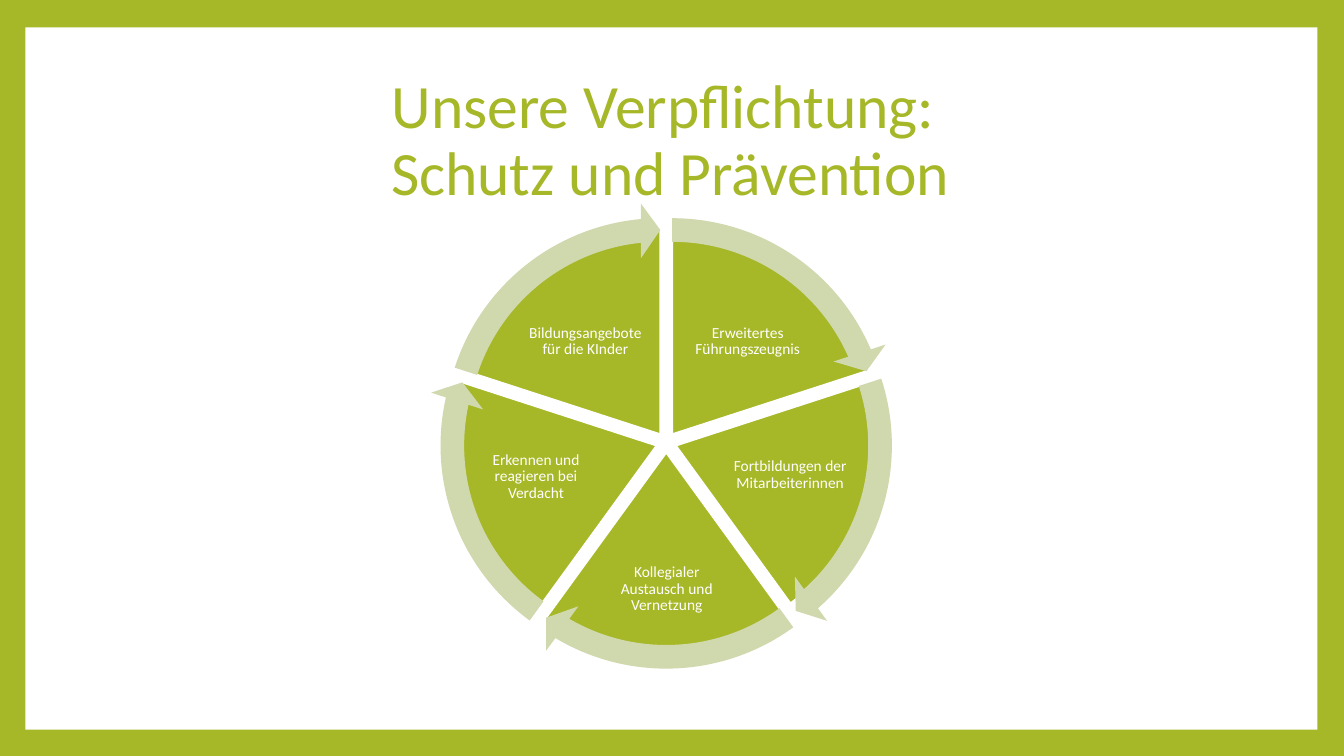
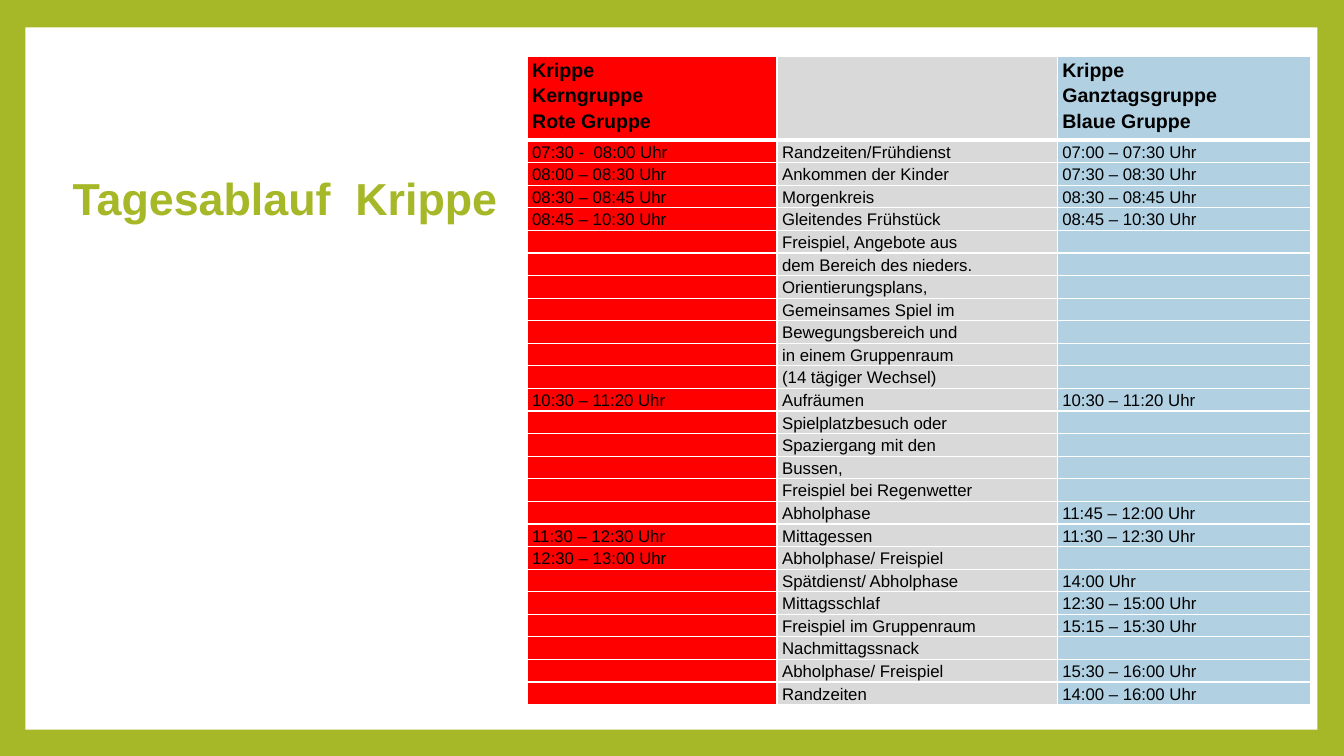
from math import cos, radians, sin

from lxml.etree import SubElement
from pptx import Presentation
from pptx.dml.color import RGBColor
from pptx.enum.shapes import MSO_SHAPE
from pptx.enum.text import MSO_ANCHOR, MSO_AUTO_SIZE, PP_ALIGN
from pptx.oxml.ns import qn
from pptx.util import Cm, Pt

COLORS = {
    "green": "A6B727",
    "pale": "D0D8AD",
    "white": "FFFFFF",
    "black": "000000",
    "red": "FF0000",
    "grey": "D9D9D9",
    "blue": "B1D1E3",
}
TITLE_ONLY = 5

# Lengths in cm, boxes as left, top, width, height
PANEL = (0.64, 0.69, 32.56, 17.7)

DUTY_TITLE = "Unsere Verpflichtung: \vSchutz und Prävention"
DUTY_TITLE_BOX = (3.18, 1.7, 27.43, 3.76)
# Label, label box, diameter of the sector; clockwise from the top
DUTIES = [
    ("Erweitertes Führungszeugnis", (17.17, 7.49, 3.35, 2.24), 10.41),
    ("Fortbildungen der Mitarbeiterinnen", (18.44, 10.8, 2.95, 2.34), 9.84),
    ("Kollegialer Austausch und Vernetzung", (15.32, 13.49, 2.97, 2.72), 10.41),
    ("Erkennen und reagieren bei Verdacht", (11.96, 10.77, 3.1, 2.49), 10.41),
    ("Bildungsangebote für die KInder", (13.08, 7.49, 3.35, 2.24), 10.41),
]
WHEEL_CENTER = (16.79, 11.15)
SECTOR_OFFSET = 0.25
ARROW_DIAMETER = 11.68
ARROW_BAND, ARROW_HEAD = 0.051, 0.059
HEAD_ANGLE = 5.46
ANGLE_UNIT = 0.6  # adjustment value of one degree

DAY_TITLE = "Tagesablauf  Krippe"
DAY_TITLE_BOX = (1.45, 4.32, 13.21, 11.18)
SCHEDULE_AT = (13.28, 1.42)
SCHEDULE_COLUMNS = [(6.3, "red"), (7.06, "grey"), (6.38, "blue")]
HEADER_HEIGHT, ROW_HEIGHT = 2.11, 0.57
SCHEDULE = [
    ("Krippe\nKerngruppe\nRote Gruppe", "", "Krippe\nGanztagsgruppe\nBlaue Gruppe"),
    ("07:30 -  08:00 Uhr", "Randzeiten/Frühdienst", "07:00 – 07:30 Uhr"),
    ("08:00 – 08:30 Uhr", "Ankommen der Kinder", "07:30 – 08:30 Uhr"),
    ("08:30 – 08:45 Uhr", "Morgenkreis", "08:30 – 08:45 Uhr"),
    ("08:45 – 10:30 Uhr", "Gleitendes Frühstück", "08:45 – 10:30 Uhr"),
    ("", "Freispiel, Angebote aus", ""),
    ("", "dem Bereich des nieders.", ""),
    ("", "Orientierungsplans,", ""),
    ("", "Gemeinsames Spiel im", ""),
    ("", "Bewegungsbereich und", ""),
    ("", "in einem Gruppenraum", ""),
    ("", "(14 tägiger Wechsel)", ""),
    ("10:30 – 11:20 Uhr", "Aufräumen", "10:30 – 11:20 Uhr"),
    ("", "Spielplatzbesuch oder", ""),
    ("", "Spaziergang mit den", ""),
    ("", "Bussen,", ""),
    ("", "Freispiel bei Regenwetter", ""),
    ("", "Abholphase", "11:45 – 12:00 Uhr"),
    ("11:30 – 12:30 Uhr", "Mittagessen", "11:30 – 12:30 Uhr"),
    ("12:30 – 13:00 Uhr", "Abholphase/ Freispiel", ""),
    ("", "Spätdienst/ Abholphase", "14:00 Uhr"),
    ("", "Mittagsschlaf", "12:30 – 15:00 Uhr"),
    ("", "Freispiel im Gruppenraum", "15:15 – 15:30 Uhr"),
    ("", "Nachmittagssnack", ""),
    ("", "Abholphase/ Freispiel", "15:30 – 16:00 Uhr"),
    ("", "Randzeiten", "14:00 – 16:00 Uhr"),
]


def rgb(name):
    return RGBColor.from_string(COLORS[name])


def write(frame, text, *, size, color, font="Calibri", bold=False,
          align=PP_ALIGN.LEFT, spacing=0.9):
    """Fill a text frame, one paragraph per line of text."""
    frame.text = text
    for paragraph in frame.paragraphs:
        paragraph.alignment = align
        paragraph.line_spacing = spacing
        for run in paragraph.runs:
            run.font.name = font
            run.font.size = Pt(size)
            run.font.bold = bold
            run.font.color.rgb = rgb(color)
        if not paragraph.runs:
            # An empty cell would otherwise grow to the default text size
            paragraph._p.get_or_add_endParaRPr().set("sz", str(size * 100))


def set_margins(holder, left, top, right, bottom):
    holder.margin_left, holder.margin_top = Cm(left), Cm(top)
    holder.margin_right, holder.margin_bottom = Cm(right), Cm(bottom)


def add_filled(shapes, kind, box, fill, line=None, adjustments=()):
    shape = shapes.add_shape(kind, *map(Cm, box))
    shape.shadow.inherit = False
    shape.fill.solid()
    shape.fill.fore_color.rgb = rgb(fill)
    if line:
        shape.line.color.rgb = rgb(line)
        shape.line.width = Pt(1.5)
    else:
        shape.line.fill.background()
    for index, value in enumerate(adjustments):
        shape.adjustments[index] = value
    return shape


def set_title(slide, text, box, anchor, **text_format):
    title = slide.shapes.title
    title.left, title.top, title.width, title.height = map(Cm, box)
    frame = title.text_frame
    frame.word_wrap = True
    frame.auto_size = MSO_AUTO_SIZE.NONE
    frame.vertical_anchor = anchor
    write(frame, text, color="green", **text_format)
    return title


def style_master(prs, slide):
    """Give every slide the green frame around a white panel."""
    master = prs.slide_master
    master.background.fill.solid()
    master.background.fill.fore_color.rgb = rgb("green")
    panel = add_filled(slide.shapes, MSO_SHAPE.RECTANGLE, PANEL, "white")
    master.shapes._spTree.insert(2, panel._element)


def sector_box(start, sweep, diameter):
    """Square around a circle that is pushed outwards along its sector."""
    middle = radians(start + sweep / 2)
    x = WHEEL_CENTER[0] + SECTOR_OFFSET * cos(middle)
    y = WHEEL_CENTER[1] + SECTOR_OFFSET * sin(middle)
    return x - diameter / 2, y - diameter / 2, diameter, diameter


def add_wheel(slide):
    shapes = slide.shapes.add_group_shape().shapes
    sweep = 360 / len(DUTIES)
    starts = [(270 + index * sweep) % 360 for index in range(len(DUTIES))]

    for start, (label, label_box, diameter) in zip(starts, DUTIES):
        end = (start + sweep) % 360
        add_filled(shapes, MSO_SHAPE.PIE, sector_box(start, sweep, diameter),
                   "green", "white", (start * ANGLE_UNIT, end * ANGLE_UNIT))
        frame = shapes.add_textbox(*map(Cm, label_box)).text_frame
        frame.word_wrap = True
        frame.vertical_anchor = MSO_ANCHOR.MIDDLE
        set_margins(frame, 0.05, 0.05, 0.05, 0.05)
        write(frame, label, size=11, color="white", align=PP_ALIGN.CENTER)

    for start in starts:
        tip = (start + sweep) % 360 - HEAD_ANGLE
        add_filled(shapes, MSO_SHAPE.CIRCULAR_ARROW,
                   sector_box(start, sweep, ARROW_DIAMETER), "pale",
                   adjustments=(ARROW_BAND, HEAD_ANGLE * ANGLE_UNIT,
                                tip * ANGLE_UNIT, start * ANGLE_UNIT, ARROW_HEAD))


def add_borders(cell, top, bottom):
    properties = cell._tc.get_or_add_tcPr()
    for side, width in (("L", 1), ("R", 1), ("T", top), ("B", bottom)):
        line = SubElement(properties, qn(f"a:ln{side}"), w=str(Pt(width)))
        fill = SubElement(line, qn("a:solidFill"))
        SubElement(fill, qn("a:srgbClr"), val=COLORS["white"])


def add_schedule(slide):
    heights = [HEADER_HEIGHT] + [ROW_HEIGHT] * (len(SCHEDULE) - 1)
    width = sum(column_width for column_width, _ in SCHEDULE_COLUMNS)
    table = slide.shapes.add_table(
        len(SCHEDULE), len(SCHEDULE_COLUMNS),
        *map(Cm, (*SCHEDULE_AT, width, sum(heights)))).table
    table.horz_banding = False
    for column, (column_width, _) in zip(table.columns, SCHEDULE_COLUMNS):
        column.width = Cm(column_width)

    for index, (entries, height) in enumerate(zip(SCHEDULE, heights)):
        table.rows[index].height = Cm(height)
        is_header = index == 0
        for column, (entry, (_, fill)) in enumerate(zip(entries, SCHEDULE_COLUMNS)):
            cell = table.cell(index, column)
            set_margins(cell, 0.13, 0, 0.13, 0)
            add_borders(cell, top=3 if index == 1 else 1, bottom=3 if is_header else 1)
            cell.fill.solid()
            cell.fill.fore_color.rgb = rgb(fill)
            write(cell.text_frame, entry, size=14 if is_header else 12,
                  color="black", font="Arial", bold=is_header, spacing=1.15)


def main():
    prs = Presentation()
    prs.slide_width, prs.slide_height = Cm(33.87), Cm(19.05)
    layout = prs.slide_layouts[TITLE_ONLY]

    duty_slide = prs.slides.add_slide(layout)
    style_master(prs, duty_slide)
    set_title(duty_slide, DUTY_TITLE, DUTY_TITLE_BOX, MSO_ANCHOR.MIDDLE,
              size=44, align=PP_ALIGN.CENTER)
    add_wheel(duty_slide)

    day_slide = prs.slides.add_slide(layout)
    day_title = set_title(day_slide, DAY_TITLE, DAY_TITLE_BOX, MSO_ANCHOR.TOP,
                          size=32, font="Arial", bold=True)
    day_title.text_frame.margin_left = Cm(0.38)
    add_schedule(day_slide)

    prs.save("out.pptx")


if __name__ == "__main__":
    main()
